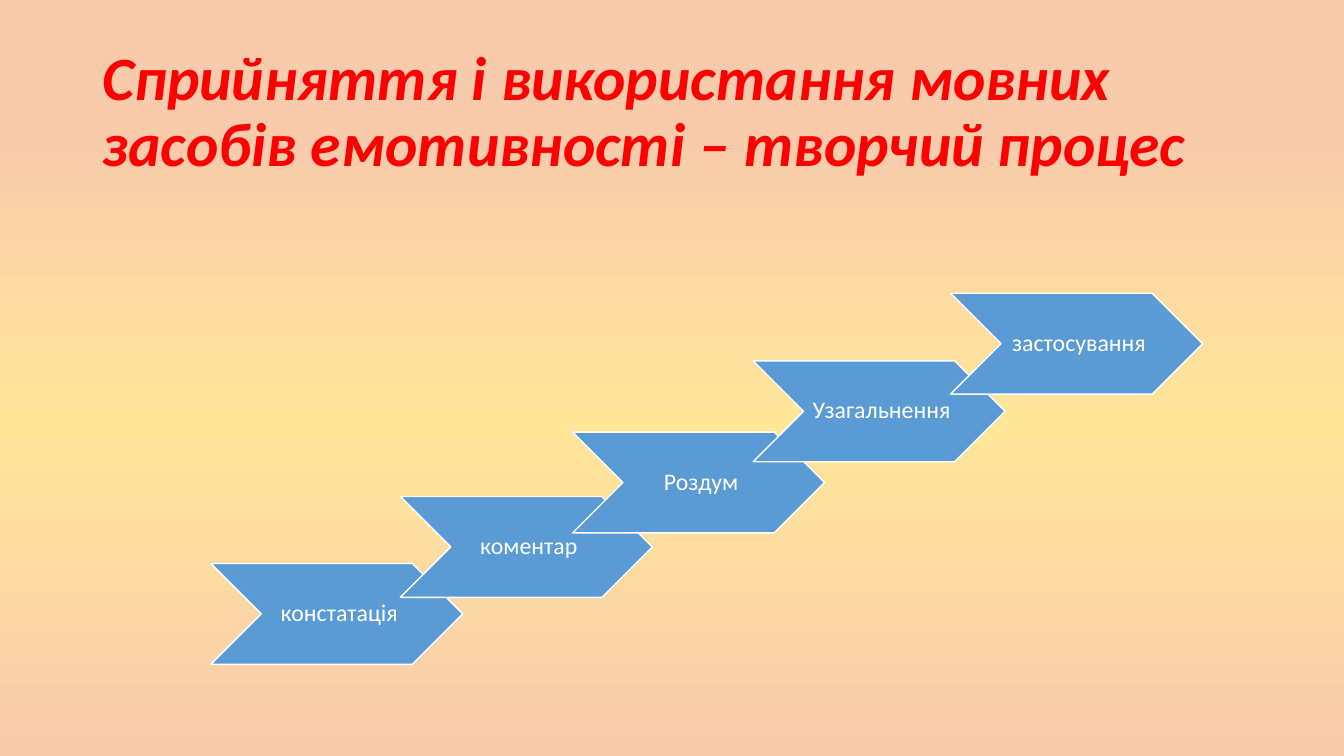
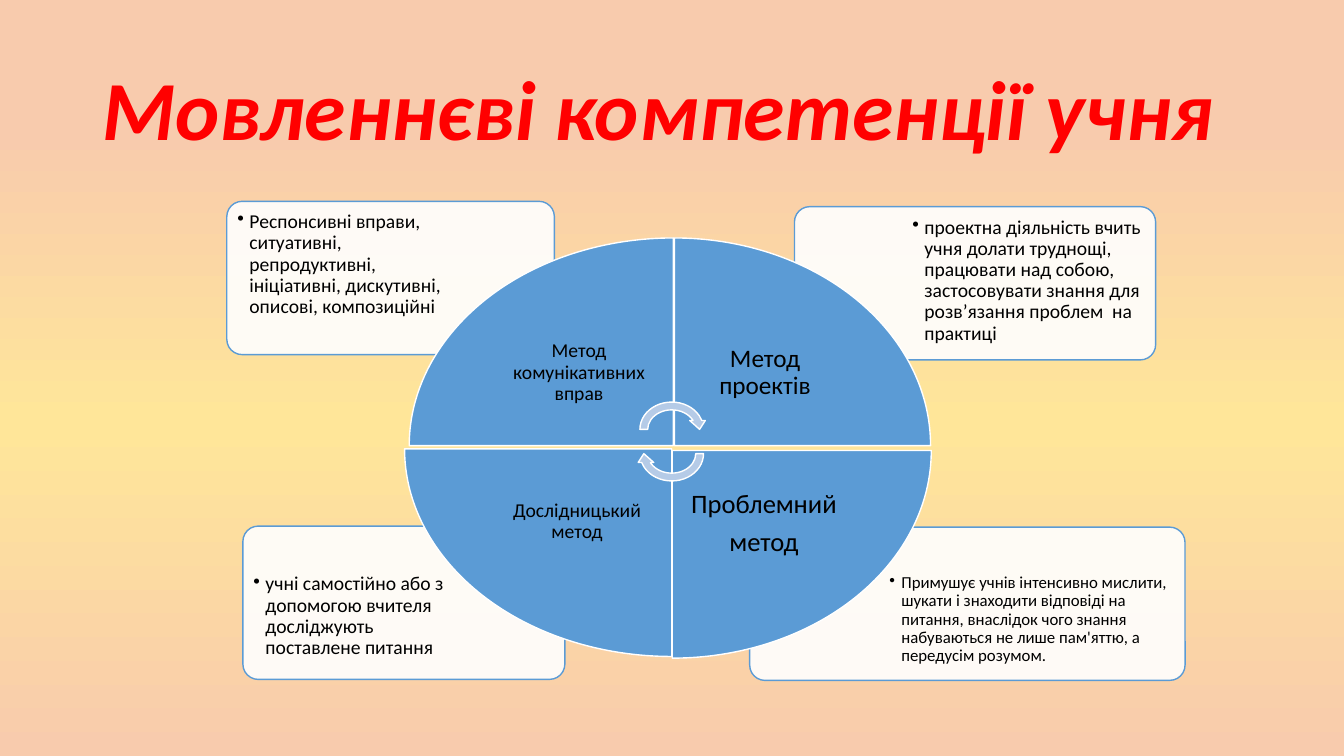
from dataclasses import dataclass

from lxml.etree import SubElement
from pptx import Presentation
from pptx.dml.color import RGBColor
from pptx.enum.shapes import MSO_SHAPE
from pptx.enum.text import MSO_ANCHOR, PP_ALIGN
from pptx.oxml.ns import qn
from pptx.shapes.autoshape import Shape
from pptx.slide import Slide
from pptx.util import Pt

RED, BLACK, WHITE = "FF0000", "000000", "FFFFFF"
BLUE, PALE_BLUE = "5B9BD5", "B5CBE7"
PEACH, YELLOW = "F8CBAD", "FFE699"
BACKGROUND_STOPS = ((17, PEACH), (56, YELLOW), (100, PEACH))

CHEVRON_SIZE = (180, 72)
CARD_HEIGHT = 109.5
WEDGE_HEIGHT = 148.3
LABEL_HEIGHT = 105
BULLET_INDENT = 8.64


@dataclass(frozen=True)
class Box:
    left: float
    top: float
    width: float
    height: float

    def lengths(self) -> tuple[Pt, Pt, Pt, Pt]:
        return Pt(self.left), Pt(self.top), Pt(self.width), Pt(self.height)

    def before_rotation(self, rotation: int) -> "Box":
        """Give the frame that covers this box once it has been rotated."""
        if rotation % 180 == 0:
            return self
        shift = (self.width - self.height) / 2
        return Box(self.left + shift, self.top - shift, self.height, self.width)


@dataclass(frozen=True)
class Insets:
    left: float
    top: float
    right: float
    bottom: float


@dataclass(frozen=True)
class TextStyle:
    size: float
    color: str = BLACK
    bold: bool = False
    italic: bool = False
    align: PP_ALIGN = PP_ALIGN.CENTER
    anchor: MSO_ANCHOR = MSO_ANCHOR.MIDDLE
    space_after: float = 0.35
    bullet: bool = False


@dataclass(frozen=True)
class Step:
    text: str
    left: float
    top: float


@dataclass(frozen=True)
class Card:
    text: str
    box: Box
    insets: Insets
    size: float


@dataclass(frozen=True)
class Quadrant:
    lines: tuple[str, ...]
    size: float
    rotation: int
    wedge: Box
    label: Box
    inset: float


STEPS = (
    Step("констатація", 150.6, 402.5),
    Step("коментар", 286, 354.7),
    Step("Роздум", 409, 308.7),
    Step("Узагальнення", 538, 257.8),
    Step("застосування", 679, 209.5),
)

CARDS = (
    Card("Примушує учнів інтенсивно мислити, шукати і знаходити відповіді на "
         "питання, внаслідок чого знання набуваються не лише пам'яттю, а "
         "передусім розумом.",
         Box(535.5, 376.5, 311, CARD_HEIGHT), Insets(96.5, 30.5, 3.6, 3.6), 12),
    Card("учні самостійно або з допомогою вчителя досліджують поставлене питання",
         Box(173.5, 375.8, 230, CARD_HEIGHT), Insets(4.3, 31, 72, 4.3), 14),
    Card("проектна діяльність вчить учня долати труднощі, працювати над собою, "
         "застосовувати знання для розв’язання проблем  на практиці",
         Box(567.5, 147.6, 258, CARD_HEIGHT), Insets(81, 4.3, 4.3, 4.3), 14),
    Card("Респонсивні вправи, ситуативні, репродуктивні, ініціативні, "
         "дискутивні, описові, композиційні",
         Box(162, 143.8, 234, CARD_HEIGHT), Insets(4.3, 4.3, 74, 4.3), 14),
)

QUADRANTS = (
    Quadrant(("Метод комунікативних вправ",), 14, 0,
             Box(292.3, 170, 188.6, WEDGE_HEIGHT),
             Box(347, 213.8, 133.2, LABEL_HEIGHT), 8),
    Quadrant(("Метод проектів",), 18, 90,
             Box(481.7, 170, 183, WEDGE_HEIGHT),
             Box(481.7, 213.8, 129.6, LABEL_HEIGHT), 10),
    Quadrant(("Проблемний", "метод"), 19, 180,
             Box(480.2, 321.8, 185, WEDGE_HEIGHT),
             Box(480.2, 321.8, 131, LABEL_HEIGHT), 10.8),
    Quadrant(("Дослідницький метод",), 14, 270,
             Box(289, 320.6, 190.8, WEDGE_HEIGHT),
             Box(344.9, 320.4, 134.6, LABEL_HEIGHT), 8),
)

CYCLE_ARROWS = (
    (Box(454.3, 284.4, 51, 44.6), 0),
    (Box(454.3, 301.7, 51, 44.6), 180),
)


def rgb(color: str) -> RGBColor:
    return RGBColor.from_string(color)


def paint_background(slide: Slide) -> None:
    fill = slide.background.fill
    fill.gradient()
    fill.gradient_angle = 270
    stop_list = slide.background._cSld.find(".//" + qn("a:gsLst"))
    stop_list.clear()
    for position, color in BACKGROUND_STOPS:
        stop = SubElement(stop_list, qn("a:gs"), pos=str(position * 1000))
        SubElement(stop, qn("a:srgbClr"), val=color)


def write_text(shape: Shape, lines: tuple[str, ...], style: TextStyle,
               insets: Insets) -> None:
    frame = shape.text_frame
    frame_format = {
        "word_wrap": True,
        "vertical_anchor": style.anchor,
        "margin_left": Pt(insets.left),
        "margin_top": Pt(insets.top),
        "margin_right": Pt(insets.right),
        "margin_bottom": Pt(insets.bottom),
    }
    for name, value in frame_format.items():
        setattr(frame, name, value)
    font_format = {"name": "Calibri", "size": Pt(style.size),
                   "bold": style.bold, "italic": style.italic}
    for index, line in enumerate(lines):
        paragraph = frame.add_paragraph() if index else frame.paragraphs[0]
        paragraph.alignment = style.align
        paragraph.line_spacing = 0.9
        paragraph.space_after = Pt(style.size * style.space_after)
        run = paragraph.add_run()
        run.text = line
        for name, value in font_format.items():
            setattr(run.font, name, value)
        run.font.color.rgb = rgb(style.color)
        if style.bullet:
            properties = paragraph._p.get_or_add_pPr()
            properties.set("marL", str(Pt(BULLET_INDENT)))
            properties.set("indent", str(-Pt(BULLET_INDENT)))
            SubElement(properties, qn("a:buChar"), char="•")


def add_text(slide: Slide, box: Box, lines: tuple[str, ...], style: TextStyle,
             insets: Insets) -> None:
    write_text(slide.shapes.add_textbox(*box.lengths()), lines, style, insets)


def add_preset(slide: Slide, kind: MSO_SHAPE, box: Box, fill: str, line: str,
               rotation: int = 0) -> Shape:
    """Draw a flat shape that fills the box as seen after rotation."""
    shape = slide.shapes.add_shape(kind, *box.before_rotation(rotation).lengths())
    shape.shadow.inherit = False
    shape.rotation = rotation
    shape.fill.solid()
    shape.fill.fore_color.rgb = rgb(fill)
    shape.line.color.rgb = rgb(line)
    shape.line.width = Pt(1)
    return shape


def add_step(slide: Slide, step: Step) -> None:
    box = Box(step.left, step.top, *CHEVRON_SIZE)
    chevron = add_preset(slide, MSO_SHAPE.CHEVRON, box, BLUE, WHITE)
    write_text(chevron, (step.text,), TextStyle(17, WHITE), Insets(5, 1.5, 1.5, 1.5))


def add_card(slide: Slide, card: Card) -> None:
    shape = add_preset(slide, MSO_SHAPE.ROUNDED_RECTANGLE, card.box, WHITE, BLUE)
    shape.adjustments[0] = 0.1
    color = shape._element.spPr.find(qn("a:solidFill")).find(qn("a:srgbClr"))
    SubElement(color, qn("a:alpha"), val="90000")
    style = TextStyle(card.size, align=PP_ALIGN.LEFT, anchor=MSO_ANCHOR.TOP,
                      space_after=0.15, bullet=True)
    write_text(shape, (card.text,), style, card.insets)


def add_quadrant(slide: Slide, quadrant: Quadrant) -> None:
    add_preset(slide, MSO_SHAPE.PIE_WEDGE, quadrant.wedge, BLUE, WHITE,
               quadrant.rotation)
    add_text(slide, quadrant.label, quadrant.lines, TextStyle(quadrant.size),
             Insets(*[quadrant.inset] * 4))


def add_titled_slide(presentation: Presentation, title: str, size: float) -> Slide:
    slide = presentation.slides.add_slide(presentation.slide_layouts[6])
    paint_background(slide)
    style = TextStyle(size, RED, bold=True, italic=True, align=PP_ALIGN.LEFT,
                      space_after=0)
    add_text(slide, Box(66, 28.75, 828, 104.4), (title,), style,
             Insets(7.2, 3.6, 7.2, 3.6))
    return slide


def main() -> None:
    presentation = Presentation()
    presentation.slide_width, presentation.slide_height = Pt(960), Pt(540)

    process = add_titled_slide(
        presentation,
        "Сприйняття і використання мовних засобів емотивності – творчий процес", 44)
    for step in STEPS:
        add_step(process, step)

    competences = add_titled_slide(presentation, "Мовленнєві компетенції учня", 60)
    for card in CARDS:
        add_card(competences, card)
    for quadrant in QUADRANTS:
        add_quadrant(competences, quadrant)
    for box, rotation in CYCLE_ARROWS:
        add_preset(competences, MSO_SHAPE.CIRCULAR_ARROW, box, PALE_BLUE, WHITE,
                   rotation)

    presentation.save("out.pptx")


if __name__ == "__main__":
    main()
